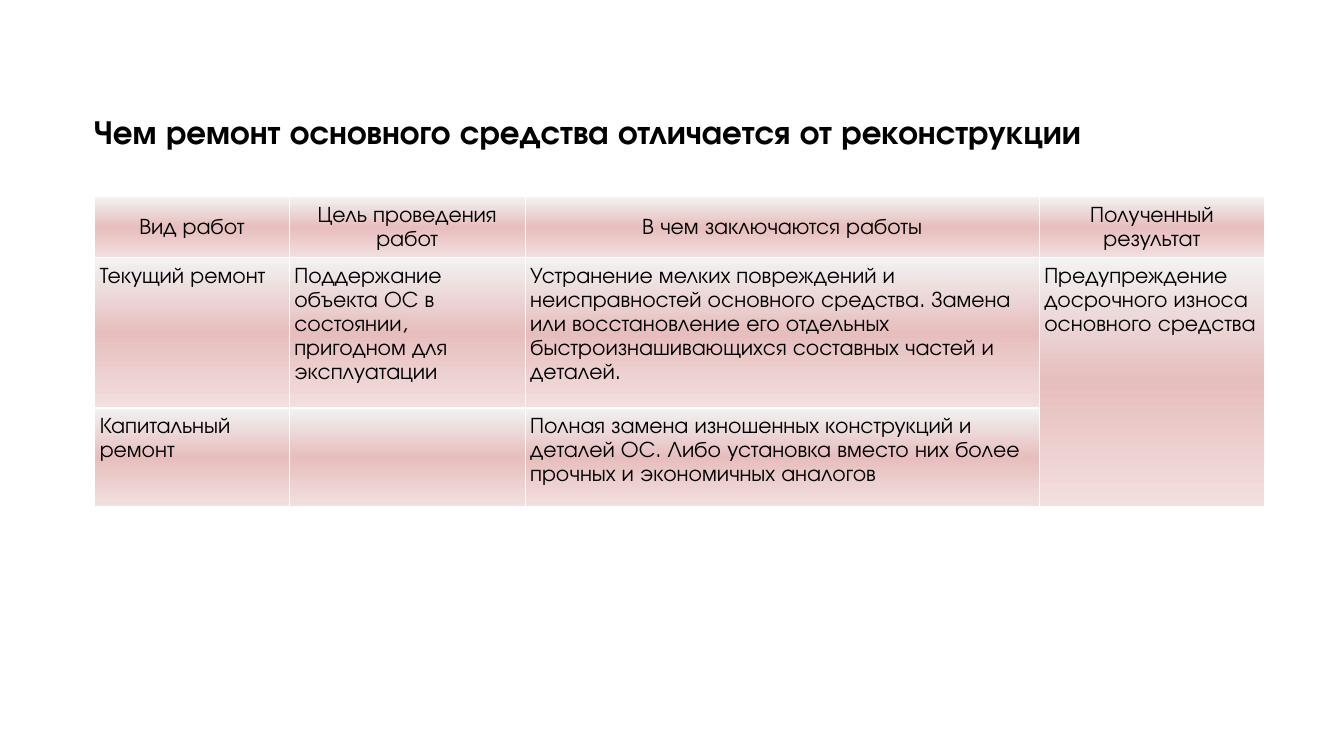
from dataclasses import dataclass

from lxml import etree
from pptx import Presentation
from pptx.dml.color import RGBColor
from pptx.enum.text import MSO_ANCHOR, PP_ALIGN
from pptx.oxml.ns import qn
from pptx.util import Pt

TOP, MIDDLE, BOTTOM = MSO_ANCHOR.TOP, MSO_ANCHOR.MIDDLE, MSO_ANCHOR.BOTTOM
LEFT, CENTER = PP_ALIGN.LEFT, PP_ALIGN.CENTER


@dataclass(frozen=True)
class Theme:
    font: str = "TeX Gyre Adventor"
    ink: str = "000000"
    rule: str = "FFFFFF"
    blend: tuple = ((0, "F2F2F2"), (50, "E7BEBE"), (100, "F3DFDF"))
    title: int = 24
    body: int = 16
    pitch: float = 17.15


@dataclass(frozen=True)
class Row:
    height: float
    texts: tuple
    align: int = LEFT
    anchor: int = TOP


THEME = Theme()
WIDTHS = (138.96, 168.48, 367.2, 161)
ROWS = (
    Row(43.5, ("Вид работ", "Цель проведения работ",
               "В чем заключаются работы", "Полученный результат"), CENTER, MIDDLE),
    Row(107.3, ("Текущий ремонт",
                "Поддержание объекта ОС в состоянии, пригодном для эксплуатации",
                "Устранение мелких повреждений и неисправностей основного средства. "
                "Замена или восстановление его отдельных быстроизнашивающихся "
                "составных частей и деталей.",
                "Предупреждение досрочного износа основного средства")),
    Row(70.5, ("Капитальный ремонт", "",
               "Полная замена изношенных конструкций и деталей ОС. "
               "Либо установка вместо них более прочных и экономичных аналогов", "")),
)
PADS = {"margin_left": Pt(3.6), "margin_right": Pt(3.6),
        "margin_top": Pt(4.3), "margin_bottom": Pt(4.3)}


def apply(item: object, values: dict) -> None:
    for name, value in values.items():
        setattr(item, name, value)


def write(frame: object, text: str, size: int, bold: bool, format: dict) -> None:
    line = frame.paragraphs[0]
    apply(line, format)
    if text:
        run = line.add_run()
        run.text = text
        apply(run.font, {"name": THEME.font, "size": Pt(size), "bold": bold})
        run.font.color.rgb = RGBColor.from_string(THEME.ink)


def add_color(parent: object, color: str) -> None:
    etree.SubElement(parent, qn("a:srgbClr"), val=color)


def paint(cell: object) -> None:
    props = cell._tc.get_or_add_tcPr()
    for side in ("lnL", "lnR", "lnT", "lnB"):
        edge = etree.SubElement(props, qn(f"a:{side}"), w=str(Pt(1)))
        add_color(etree.SubElement(edge, qn("a:solidFill")), THEME.rule)
    fill = etree.SubElement(props, qn("a:gradFill"), rotWithShape="1")
    stops = etree.SubElement(fill, qn("a:gsLst"))
    for place, color in THEME.blend:
        add_color(etree.SubElement(stops, qn("a:gs"), pos=str(place * 1000)), color)
    etree.SubElement(fill, qn("a:lin"), ang="5400000", scaled="0")


def add_title(slide: object) -> None:
    box = slide.shapes.add_textbox(Pt(60), Pt(50.4), Pt(864), Pt(90))
    frame = box.text_frame
    apply(frame, {"word_wrap": True, "vertical_anchor": BOTTOM, "margin_bottom": Pt(32)})
    write(frame, "Чем ремонт основного средства отличается от реконструкции",
          THEME.title, True, {"line_spacing": 0.9})


def add_grid(slide: object) -> None:
    height = sum(row.height for row in ROWS)
    table = slide.shapes.add_table(len(ROWS), len(WIDTHS), Pt(67.7), Pt(140.6),
                                   Pt(sum(WIDTHS)), Pt(height)).table
    apply(table, {"first_row": False, "horz_banding": False})
    for column, width in zip(table.columns, WIDTHS):
        column.width = Pt(width)
    for line, row in zip(table.rows, ROWS):
        line.height = Pt(row.height)
        for cell, text in zip(line.cells, row.texts):
            apply(cell, PADS | {"vertical_anchor": row.anchor})
            write(cell.text_frame, text, THEME.body, False,
                  {"alignment": row.align, "line_spacing": Pt(THEME.pitch)})
            paint(cell)
    table.cell(1, 3).merge(table.cell(2, 3))


def main() -> None:
    deck = Presentation()
    apply(deck, {"slide_width": Pt(960), "slide_height": Pt(540)})
    slide = deck.slides.add_slide(deck.slide_layouts[6])
    add_title(slide)
    add_grid(slide)
    deck.save("out.pptx")


if __name__ == "__main__":
    main()
